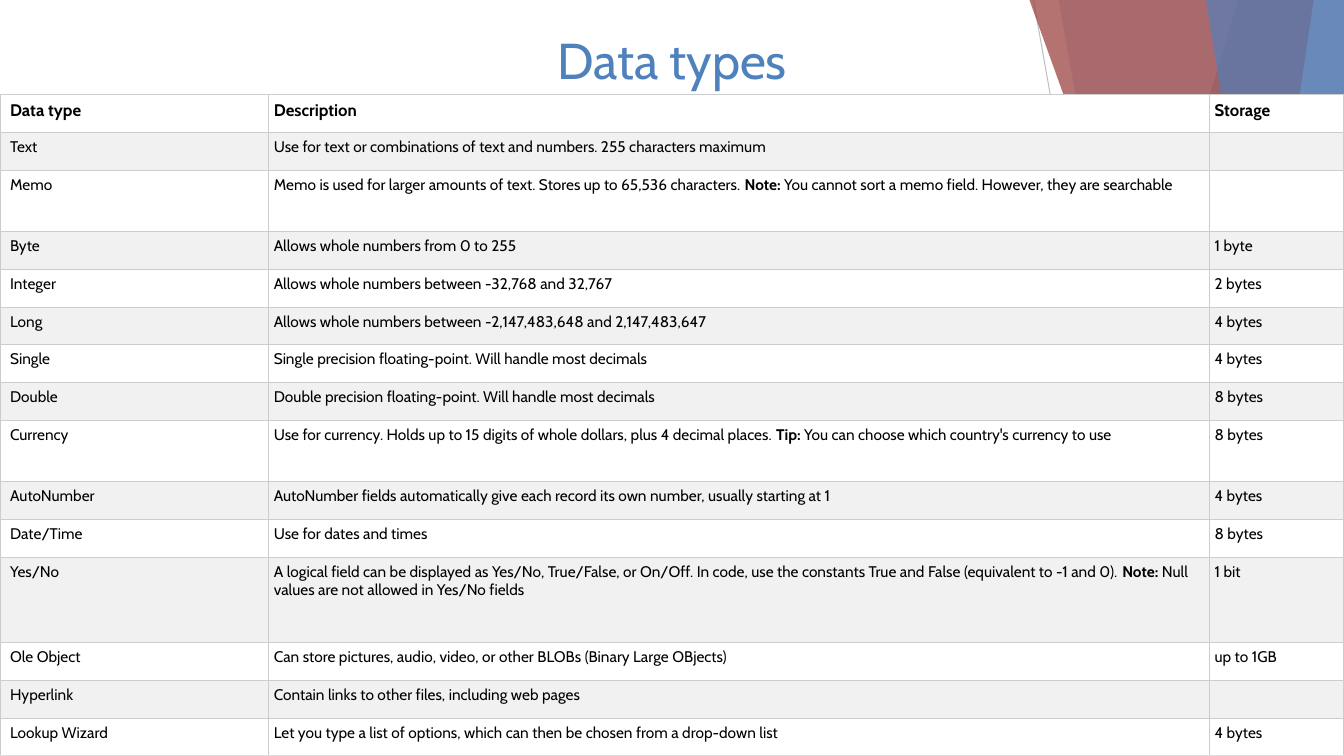
from lxml import etree
from pptx import Presentation
from pptx.dml.color import RGBColor
from pptx.enum.shapes import MSO_CONNECTOR
from pptx.enum.text import MSO_ANCHOR, PP_ALIGN
from pptx.oxml.ns import qn
from pptx.util import Inches, Pt

WIDTH, HEIGHT = 13.33, 7.5
FONT = "Cabin"
BLUE = RGBColor(0x4F, 0x81, 0xBD)
LIGHT_BLUE = RGBColor(0x95, 0xB3, 0xD7)
DARK_RED = RGBColor(0x95, 0x37, 0x35)
GREY_LINE = RGBColor(0xBF, 0xBF, 0xBF)
GRID = RGBColor(0xCC, 0xCC, 0xCC)
LAST_GRID = RGBColor(0xDD, 0xDD, 0xDD)
BAND = RGBColor(0xF1, 0xF1, 0xF1)
WHITE = RGBColor(0xFF, 0xFF, 0xFF)
BLACK = RGBColor(0, 0, 0)


def style(run, size, color, bold=False):
    run.font.name = FONT
    run.font.size = Pt(size)
    run.font.bold = bold
    run.font.color.rgb = color


def add_border(cell, side, color):
    line = etree.SubElement(cell._tc.get_or_add_tcPr(), qn(f"a:{side}"), w=str(Pt(0.75)))
    fill = etree.SubElement(line, qn("a:solidFill"))
    etree.SubElement(fill, qn("a:srgbClr"), val=str(color))


deck = Presentation()
deck.slide_width, deck.slide_height = Inches(WIDTH), Inches(HEIGHT)
slide = deck.slides.add_slide(deck.slide_layouts[6])

# Slanted backdrop: a thin line, then translucent panels reaching the right edge
slant = slide.shapes.add_connector(
    MSO_CONNECTOR.STRAIGHT, Inches(10.25), 0, Inches(11.58), Inches(HEIGHT))
slant.line.color.rgb = GREY_LINE
slant.line.width = Pt(0.75)
etree.SubElement(slant._element.spPr, qn("a:effectLst"))

# Left edge at the top, left edge at the bottom, colour, opacity in percent
panels = [
    (12.28, 10.04, BLUE, 30),
    (10.5, 11.83, BLUE, 20),
    (10.21, 12.91, DARK_RED, 70),
    (13.03, 11.92, LIGHT_BLUE, 70),
    (11.96, 13.18, BLUE, 65),
]
for top_left, bottom_left, color, opacity in panels:
    outline = slide.shapes.build_freeform(Inches(top_left), 0)
    outline.add_line_segments([
        (Inches(WIDTH), 0),
        (Inches(WIDTH), Inches(HEIGHT)),
        (Inches(bottom_left), Inches(HEIGHT)),
    ], close=True)
    panel = outline.convert_to_shape()
    panel.shadow.inherit = False
    panel.line.fill.background()
    panel.fill.solid()
    panel.fill.fore_color.rgb = color
    tint = panel._element.spPr.find(qn("a:solidFill"))[0]
    etree.SubElement(tint, qn("a:alpha"), val=str(opacity * 1000))

# Title
title = slide.shapes.add_textbox(0, Inches(0.22), Inches(WIDTH), Inches(0.73))
title.text_frame.word_wrap = True
title.text_frame.vertical_anchor = MSO_ANCHOR.MIDDLE
title.text_frame.text = "Data types"
heading = title.text_frame.paragraphs[0]
heading.alignment = PP_ALIGN.CENTER
style(heading.runs[0], 36, BLUE)

# Table content: ** marks bold passages
data_types = [
    ("**Data type**", "**Description**", "**Storage**"),
    ("Text", "Use for text or combinations of text and numbers. 255 characters maximum", ""),
    ("Memo", "Memo is used for larger amounts of text. Stores up to 65,536 characters. "
     "**Note:** You cannot sort a memo field. However, they are searchable", ""),
    ("Byte", "Allows whole numbers from 0 to 255", "1 byte"),
    ("Integer", "Allows whole numbers between -32,768 and 32,767", "2 bytes"),
    ("Long", "Allows whole numbers between -2,147,483,648 and 2,147,483,647", "4 bytes"),
    ("Single", "Single precision floating-point. Will handle most decimals", "4 bytes"),
    ("Double", "Double precision floating-point. Will handle most decimals", "8 bytes"),
    ("Currency", "Use for currency. Holds up to 15 digits of whole dollars, plus 4 decimal places. "
     "**Tip:** You can choose which country's currency to use", "8 bytes"),
    ("AutoNumber", "AutoNumber fields automatically give each record its own number, "
     "usually starting at 1", "4 bytes"),
    ("Date/Time", "Use for dates and times", "8 bytes"),
    ("Yes/No", "A logical field can be displayed as Yes/No, True/False, or On/Off. In code, use the "
     "constants True and False (equivalent to -1 and 0). "
     "**Note:** Null values are not allowed in Yes/No fields", "1 bit"),
    ("Ole Object", "Can store pictures, audio, video, or other BLOBs (Binary Large OBjects)",
     "up to 1GB"),
    ("Hyperlink", "Contain links to other files, including web pages", ""),
    ("Lookup Wizard", "Let you type a list of options, which can then be chosen from a "
     "drop-down list", "4 bytes"),
]

# Table grid: a few tall rows, the others share the remaining height
TABLE_TOP = 0.94
table_height = HEIGHT - TABLE_TOP
tall_rows = {"Memo": 0.61, "Currency": 0.61, "Yes/No": 0.85}
row_height = (table_height - sum(tall_rows.values())) / (len(data_types) - len(tall_rows))
table = slide.shapes.add_table(
    len(data_types), 3, 0, Inches(TABLE_TOP), Inches(WIDTH), Inches(table_height)).table
for column, share in zip(table.columns, (0.2, 0.7, 0.1)):
    column.width = Inches(WIDTH * share)

for row_index, entry in enumerate(data_types):
    table.rows[row_index].height = Inches(tall_rows.get(entry[0], row_height))
    size = 12 if row_index == 0 else 11
    is_last = row_index == len(data_types) - 1
    for column_index, text in enumerate(entry):
        cell = table.cell(row_index, column_index)
        cell.margin_left = Inches(0.1 if column_index == 0 else 0.05)
        cell.margin_right = cell.margin_top = cell.margin_bottom = Inches(0.05)
        for side in ("lnL", "lnR", "lnT", "lnB"):
            add_border(cell, side, LAST_GRID if is_last and side == "lnB" else GRID)
        cell.fill.solid()
        cell.fill.fore_color.rgb = BAND if row_index % 2 else WHITE
        paragraph = cell.text_frame.paragraphs[0]
        for part_index, part in enumerate(text.split("**")):
            if part:
                run = paragraph.add_run()
                run.text = part
                style(run, size, BLACK, bold=part_index % 2 == 1)
        if not text:
            # Keeps empty cells from stretching their row
            etree.SubElement(paragraph._p, qn("a:endParaRPr"), sz=str(size * 100))

deck.save("out.pptx")
